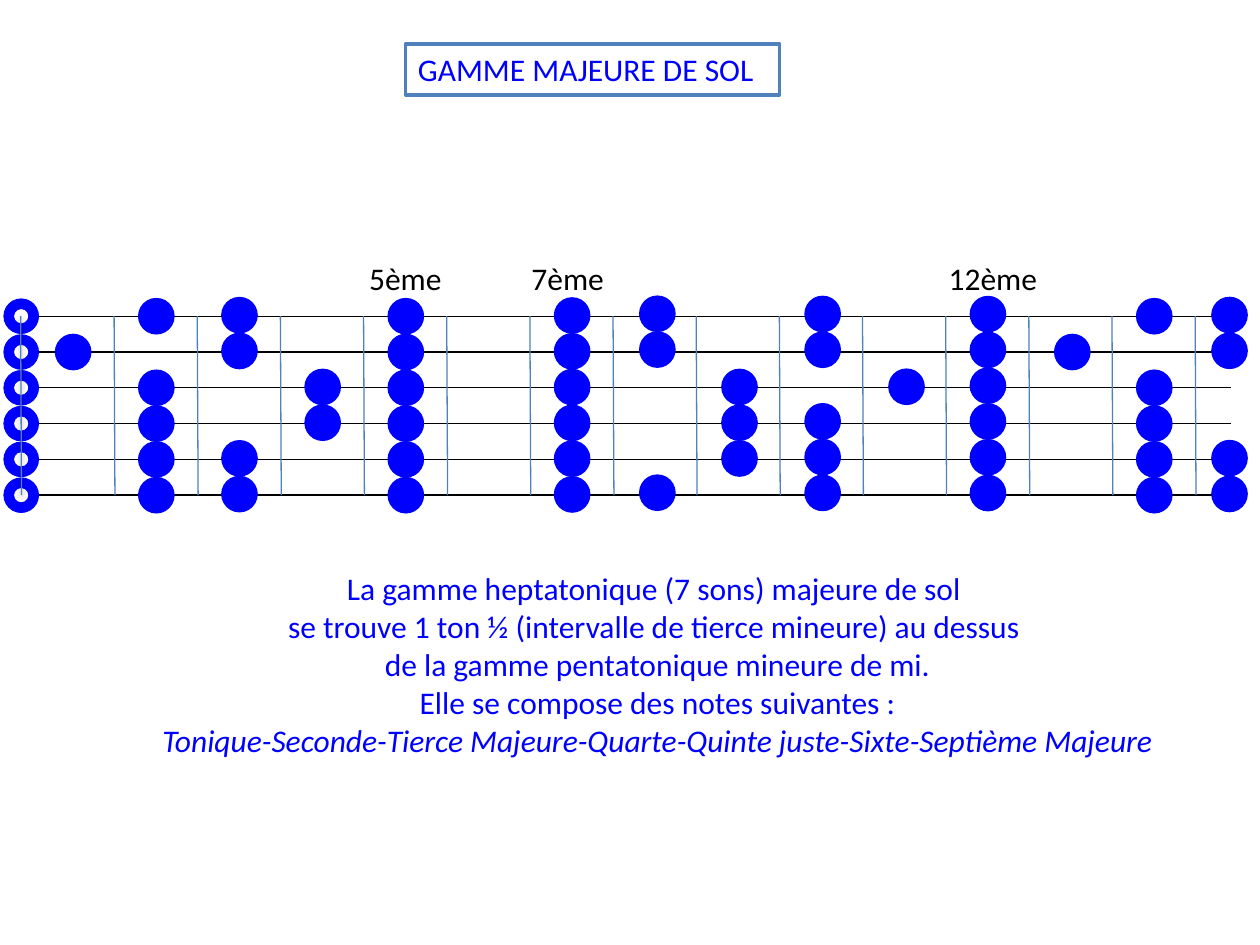
from dataclasses import dataclass

from lxml import etree
from pptx import Presentation
from pptx.dml.color import RGBColor
from pptx.enum import shapes, text
from pptx.oxml import ns
from pptx.util import Pt

COLOURS = {"note": "0000FF", "string": "000000", "fret": "4F81BD",
           "paper": "FFFFFF", "label": "000000"}
FONT = "Calibri"

STRING_COUNT = 6
STRING_TOP, STRING_GAP = 180.7, 20.45
STRING_LEFT, STRING_RIGHT = 18, 703.4
STRING_BOTTOM = STRING_TOP + (STRING_COUNT - 1) * STRING_GAP
NUT_X, FIRST_FRET_X, FRET_GAP, FRET_COUNT = 11.8, 65.2, 47.52, 14
FRET_SLANT = 0.5
FIRST_NOTE_X, NOTE_SIZE = 41.8, 20.2
OPEN_NOTE_SIZE = 19.8
ALL_STRINGS = (1, 2, 3, 4, 5, 6)


@dataclass
class FretNotes:
    """Strings held at one fret, numbered from the top, with small offsets."""
    fret: int
    strings: tuple[int, ...]
    lift: float = 0
    shift: float = 0


@dataclass
class FretLabel:
    caption: str
    left: float
    width: float


SCALE = [
    FretNotes(1, (2,)),
    FretNotes(2, (1, 3, 4, 5, 6)),
    FretNotes(3, (1, 2, 5, 6), lift=0.6),
    FretNotes(4, (3, 4), lift=0.5),
    FretNotes(5, ALL_STRINGS),
    FretNotes(7, ALL_STRINGS, lift=0.4),
    FretNotes(8, (1, 2, 6), lift=1.4, shift=1.2),
    FretNotes(9, (3, 4, 5), lift=0.5, shift=0.6),
    FretNotes(10, (1, 2, 4, 5, 6), lift=1.3, shift=0.6),
    FretNotes(11, (3,), lift=0.6, shift=1),
    FretNotes(12, ALL_STRINGS, lift=1.2),
    FretNotes(13, (2,), shift=0.7),
    FretNotes(14, (1, 3, 4, 5, 6)),
    FretNotes(15, (1, 2, 5, 6), lift=0.7, shift=-4.5),
]

FRET_LABELS = [
    FretLabel("5ème", 203.8, 56.2),
    FretLabel("7ème", 296.6, 56.2),
    FretLabel("12ème", 535, 65.5),
]

EXPLANATION = [
    "La gamme heptatonique (7 sons) majeure de sol ",
    "se trouve 1 ton ½ (intervalle de tierce mineure) au dessus ",
    "de la gamme pentatonique mineure de mi.",
    "Elle se compose des notes suivantes :",
]
DEGREES = "Tonique-Seconde-Tierce Majeure-Quarte-Quinte juste-Sixte-Septième Majeure"


def colour(name: str) -> RGBColor:
    return RGBColor.from_string(COLOURS[name])


def string_y(number: int) -> float:
    return STRING_TOP + (number - 1) * STRING_GAP


def add_line(slide, x1: float, y1: float, x2: float, y2: float, hue: str):
    """Draw a thin line and return its effect list, which is empty."""
    line = slide.shapes.add_connector(
        shapes.MSO_CONNECTOR.STRAIGHT, Pt(x1), Pt(y1), Pt(x2), Pt(y2))
    line.line.color.rgb = colour(hue)
    line.line.width = Pt(0.75)
    return etree.SubElement(line._element.spPr, ns.qn("a:effectLst"))


def add_soft_shadow(effects) -> None:
    shadow = etree.SubElement(
        effects, ns.qn("a:outerShdw"), blurRad=str(Pt(3.1)),
        dist=str(Pt(1.6)), dir="5400000", rotWithShape="0")
    black = etree.SubElement(shadow, ns.qn("a:srgbClr"), val="000000")
    etree.SubElement(black, ns.qn("a:alpha"), val="38000")


def add_filled(slide, kind, left: float, top: float, width: float,
               height: float, fill: str, edge: str, weight: float):
    shape = slide.shapes.add_shape(kind, Pt(left), Pt(top), Pt(width), Pt(height))
    shape.shadow.inherit = False
    shape.fill.solid()
    shape.fill.fore_color.rgb = colour(fill)
    shape.line.color.rgb = colour(edge)
    shape.line.width = Pt(weight)
    return shape


def add_note(slide, x: float, y: float, size: float, kind, weight: float):
    """Centre a round note on x, y."""
    return add_filled(slide, kind, x - size / 2, y - size / 2, size, size,
                      "note", "note", weight)


def write(shape, lines: list[str], hue: str, centred: bool = False,
          wrap: bool = True, italic_last: bool = False,
          outlined: bool = False) -> None:
    frame = shape.text_frame
    frame.word_wrap = wrap
    frame.auto_size = text.MSO_AUTO_SIZE.SHAPE_TO_FIT_TEXT
    frame.vertical_anchor = text.MSO_ANCHOR.TOP
    for index, words in enumerate(lines):
        paragraph = frame.add_paragraph() if index else frame.paragraphs[0]
        paragraph.alignment = text.PP_ALIGN.CENTER if centred else text.PP_ALIGN.LEFT
        run = paragraph.add_run()
        run.text = words
        run.font.name = FONT
        run.font.size = Pt(18)
        run.font.color.rgb = colour(hue)
        if italic_last and index == len(lines) - 1:
            run.font.italic = True
        if outlined:
            outline = etree.Element(ns.qn("a:ln"), w=str(Pt(0.75)))
            fill = etree.SubElement(outline, ns.qn("a:solidFill"))
            etree.SubElement(fill, ns.qn("a:srgbClr"), val=COLOURS[hue])
            run.font._element.insert(0, outline)


def add_text(slide, lines: list[str], left: float, top: float, width: float,
             height: float, **style) -> None:
    box = slide.shapes.add_textbox(Pt(left), Pt(top), Pt(width), Pt(height))
    write(box, lines, **style)


def draw_fretboard(slide) -> None:
    for number in ALL_STRINGS:
        y = string_y(number)
        add_line(slide, STRING_LEFT, y, STRING_RIGHT, y, "string")
    for number in ALL_STRINGS:
        ring = add_note(slide, 12.1, string_y(number), OPEN_NOTE_SIZE,
                        shapes.MSO_SHAPE.DONUT, 0.5)
        ring.adjustments[0] = 0.28
    for notes in SCALE:
        x = FIRST_NOTE_X + (notes.fret - 1) * FRET_GAP + notes.shift
        for number in notes.strings:
            add_note(slide, x, string_y(number) - notes.lift, NOTE_SIZE,
                     shapes.MSO_SHAPE.OVAL, 0.75)
    fret_xs = [FIRST_FRET_X + index * FRET_GAP for index in range(FRET_COUNT)]
    for x in [NUT_X] + fret_xs:
        effects = add_line(slide, x + FRET_SLANT, STRING_BOTTOM, x, STRING_TOP, "fret")
        if x == NUT_X:
            add_soft_shadow(effects)


def main() -> None:
    deck = Presentation()
    deck.slide_width, deck.slide_height = Pt(720), Pt(540)
    slide = deck.slides.add_slide(deck.slide_layouts[6])

    draw_fretboard(slide)
    for label in FRET_LABELS:
        add_text(slide, [label.caption], label.left, 144.7, label.width, 29,
                 hue="label", wrap=False)
    add_text(slide, EXPLANATION + [DEGREES], 69, 321.8, 613.5, 138.2,
             hue="note", centred=True, italic_last=True)
    title = add_filled(slide, shapes.MSO_SHAPE.RECTANGLE, 231.8, 25.2, 213.8, 29,
                       "paper", "fret", 2)
    write(title, ["GAMME MAJEURE DE SOL"], hue="note", outlined=True)

    deck.save("out.pptx")


if __name__ == "__main__":
    main()
